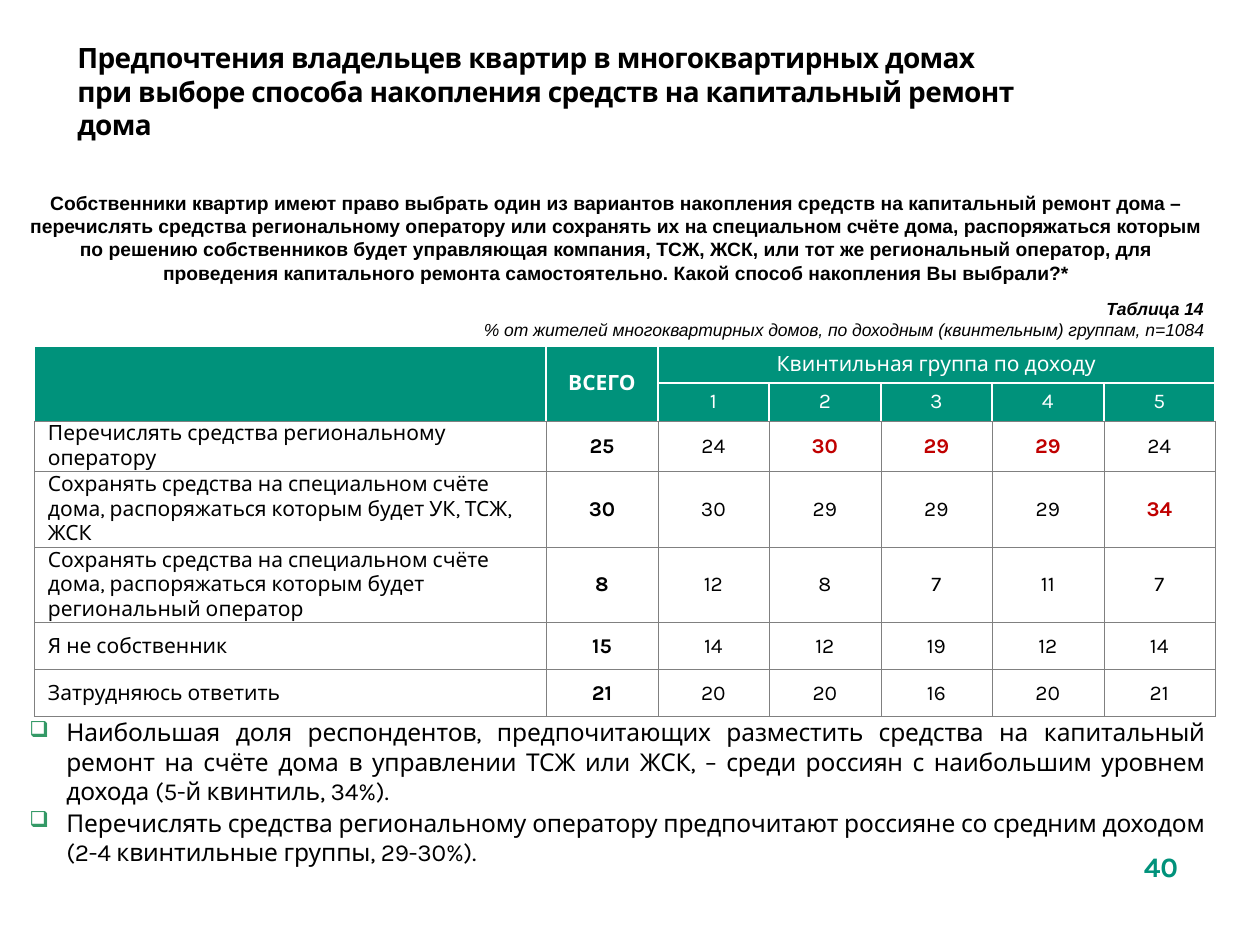
from dataclasses import dataclass
from typing import Any

from lxml.etree import SubElement
from pptx import Presentation
from pptx.dml.color import RGBColor
from pptx.enum.text import MSO_ANCHOR, PP_ALIGN
from pptx.oxml.ns import qn
from pptx.util import Pt


@dataclass(frozen=True)
class Theme:
    green: str = "00927B"
    bullet: str = "339966"
    black: str = "000000"
    white: str = "FFFFFF"
    red: str = "C00000"
    grid: str = "808080"
    sans: str = "Karla"
    arial: str = "Arial"
    heading: int = 16
    body: int = 14
    cell: int = 12
    question: int = 11
    caption: int = 10


@dataclass(frozen=True)
class Answer:
    label: str
    total: int
    quintiles: tuple[int, ...]
    high: tuple[int, ...] = ()


T = Theme()
EMU_PER_PX = 914400 / 126

ANSWERS = [
    Answer("Перечислять средства региональному оператору", 25, (24, 30, 29, 29, 24), (2, 3, 4)),
    Answer("Сохранять средства на специальном счёте дома, распоряжаться которым будет УК, ТСЖ, ЖСК",
           30, (30, 29, 29, 29, 34), (5,)),
    Answer("Сохранять средства на специальном счёте дома, распоряжаться которым будет региональный оператор",
           8, (12, 8, 7, 11, 7)),
    Answer("Я не собственник", 15, (14, 12, 19, 12, 14)),
    Answer("Затрудняюсь ответить", 21, (20, 20, 16, 20, 21)),
]

FINDINGS = [
    "Наибольшая доля респондентов, предпочитающих разместить средства на капитальный ремонт на счёте дома "
    "в управлении ТСЖ или ЖСК, – среди россиян с наибольшим уровнем дохода (5-й квинтиль, 34%).",
    "Перечислять средства региональному оператору предпочитают россияне со средним доходом "
    "(2-4 квинтильные группы, 29-30%).",
]


def px(n: int) -> int:
    return round(n * EMU_PER_PX)


def add_bullet(pPr: Any) -> None:
    color = SubElement(pPr, qn("a:buClr"))
    SubElement(color, qn("a:srgbClr"), val=T.bullet)
    SubElement(pPr, qn("a:buSzPct"), val="90000")
    SubElement(pPr, qn("a:buChar"), char="❑")


def write(tf: Any, text: str, *, size: int, color: str = T.black, font: str = T.sans,
          bold: bool = False, italic: bool = False, align: PP_ALIGN = PP_ALIGN.LEFT,
          indent: int = 0, bullet: bool = False, before: float = 0, spacing: int = 0) -> None:
    p = tf.paragraphs[0] if not tf.text else tf.add_paragraph()
    pPr = p._p.get_or_add_pPr()
    if bullet:
        add_bullet(pPr)
    if indent:
        pPr.set("marL", str(px(indent)))
        pPr.set("indent", str(-px(indent) if bullet else 0))
    p.alignment = align
    if before:
        p.space_before = Pt(before)
    p.text = text
    for r in p.runs:
        f = r.font
        f.name, f.size, f.bold, f.italic = font, Pt(size), bold, italic
        f.color.rgb = RGBColor.from_string(color)
        if spacing:
            r._r.get_or_add_rPr().set("spc", str(spacing))


def add_box(s: Any, x: int, y: int, w: int, h: int,
            anchor: MSO_ANCHOR = MSO_ANCHOR.TOP, bottom: int = 6) -> Any:
    tf = s.shapes.add_textbox(px(x), px(y), px(w), px(h)).text_frame
    tf.word_wrap = True
    tf.vertical_anchor = anchor
    tf.margin_bottom = px(bottom)
    return tf


def style_cell(cell: Any, row: int, col: int) -> None:
    header = row < 2
    tcPr = cell._tc.get_or_add_tcPr()
    for side in "LRTB":
        meets_data = side == "B" and (row == 1 or col < 2)
        white = header and not meets_data
        ln = SubElement(tcPr, qn(f"a:ln{side}"), w=str(Pt(1 if white else 0.25)))
        fill = SubElement(ln, qn("a:solidFill"))
        SubElement(fill, qn("a:srgbClr"), val=T.white if white else T.grid)
    cell.fill.solid()
    cell.fill.fore_color.rgb = RGBColor.from_string(T.green if header else T.white)
    cell.vertical_anchor = MSO_ANCHOR.MIDDLE
    cell.margin_left = cell.margin_right = px(1)
    cell.margin_top = cell.margin_bottom = 0


def add_answers(s: Any) -> None:
    widths = [512] + [112, 111] * 3
    heights = [37] * 2 + [47] * len(ANSWERS)
    table = s.shapes.add_table(len(heights), len(widths), px(34), px(346),
                               px(sum(widths)), px(sum(heights))).table
    table.first_row = table.horz_banding = False
    for column, w in zip(table.columns, widths):
        column.width = px(w)
    for line, h in zip(table.rows, heights):
        line.height = px(h)
    for row in range(len(heights)):
        for col in range(len(widths)):
            style_cell(table.cell(row, col), row, col)
    for start, end in [((0, 0), (1, 0)), ((0, 1), (1, 1)), ((0, 2), (0, 6))]:
        table.cell(*start).merge(table.cell(*end))

    def put(row: int, col: int, value: Any, **fmt: Any) -> None:
        write(table.cell(row, col).text_frame, str(value),
              **{"size": T.cell, "align": PP_ALIGN.CENTER, **fmt})

    put(0, 1, "ВСЕГО", color=T.white, bold=True)
    put(0, 2, "Квинтильная группа по доходу", color=T.white)
    for group in range(1, 6):
        put(1, group + 1, group, color=T.white)
    for row, answer in enumerate(ANSWERS, 2):
        put(row, 0, answer.label, align=PP_ALIGN.LEFT, indent=13)
        put(row, 1, answer.total, bold=True)
        for group, value in enumerate(answer.quintiles, 1):
            high = group in answer.high
            put(row, group + 1, value, bold=high, color=T.red if high else T.black)


def main() -> None:
    prs = Presentation()
    prs.slide_width, prs.slide_height = px(1260), px(945)
    s = prs.slides.add_slide(prs.slide_layouts[6])

    tf = add_box(s, 17, 711, 1200, 138)
    for i, finding in enumerate(FINDINGS):
        write(tf, finding, size=T.body, align=PP_ALIGN.JUSTIFY, indent=37, bullet=True,
              before=1.4 if i else 0, spacing=-10)

    add_answers(s)

    tf = add_box(s, 65, 46, 983, 90, MSO_ANCHOR.MIDDLE)
    write(tf, "Предпочтения владельцев квартир в многоквартирных домах \v"
              "при выборе способа накопления средств на капитальный ремонт дома",
          size=T.heading, bold=True, spacing=-30)

    tf = add_box(s, 0, 291, 1216, 74, MSO_ANCHOR.BOTTOM, bottom=25)
    caption = {"size": T.caption, "font": T.arial, "italic": True, "align": PP_ALIGN.RIGHT}
    write(tf, "Таблица 14", bold=True, **caption)
    write(tf, "% от жителей многоквартирных домов, по доходным (квинтельным) группам, n=1084", **caption)

    tf = add_box(s, 1106, 843, 110, 66)
    write(tf, "40", size=T.heading, color=T.green, bold=True, align=PP_ALIGN.CENTER)

    tf = add_box(s, 16, 183, 1201, 114, MSO_ANCHOR.BOTTOM, bottom=13)
    write(tf, "Собственники квартир имеют право выбрать один из вариантов накопления средств на капитальный "
              "ремонт дома – перечислять средства региональному оператору или сохранять их на специальном "
              "счёте дома, распоряжаться которым по решению собственников будет управляющая компания, ТСЖ, "
              "ЖСК, или тот же региональный оператор, для проведения капитального ремонта самостоятельно. "
              "Какой способ накопления Вы выбрали?*",
          size=T.question, font=T.arial, bold=True, align=PP_ALIGN.CENTER)

    prs.save("out.pptx")


if __name__ == "__main__":
    main()
